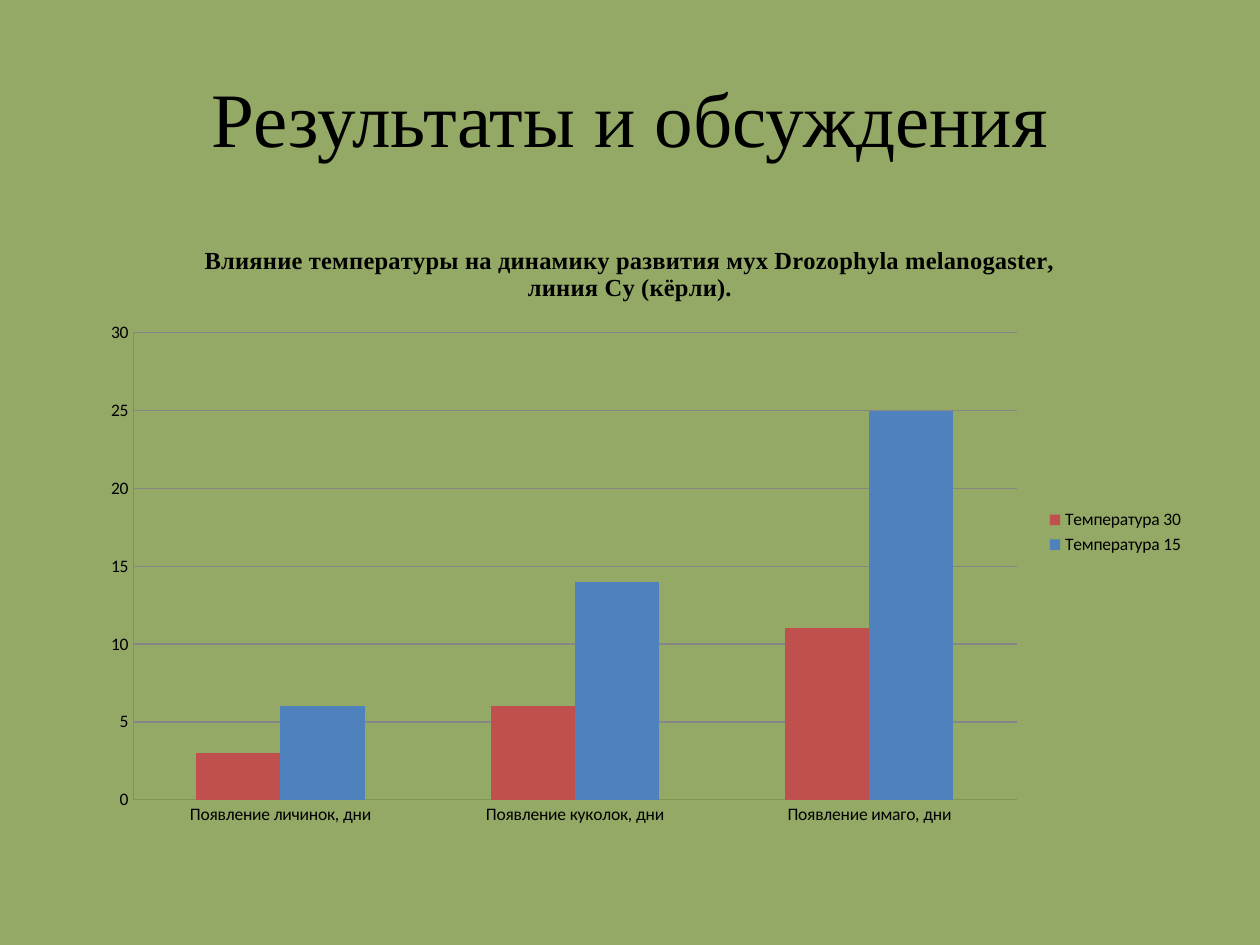
import pptx
import pptx.chart.data
import pptx.dml.color
import pptx.enum.chart
import pptx.enum.text
import pptx.oxml
import pptx.oxml.ns
import pptx.util

RGBColor = pptx.dml.color.RGBColor
OLIVE = RGBColor(0x94, 0xA9, 0x65)
BLACK = RGBColor(0, 0, 0)
GRAY = RGBColor(0x86, 0x86, 0x86)
AXIS_GREEN = RGBColor(0x7F, 0x95, 0x50)
RED = RGBColor(0xC0, 0x50, 0x4D)
BLUE = RGBColor(0x4F, 0x81, 0xBD)

WIDTH, HEIGHT = pptx.util.Inches(10), pptx.util.Inches(7.5)
SERIF, SANS = "Times New Roman", "Calibri"
STAGES = ["Появление личинок, дни", "Появление куколок, дни", "Появление имаго, дни"]
TEMPERATURES = [
    ("Температура 30", (3, 6, 11), RED),
    ("Температура 15", (6, 14, 25), BLUE),
]
CAPTION = ("Влияние температуры на динамику развития мух "
           "Drozophyla melanogaster, линия Cy (кёрли).")
PLOT_SHARES = {"x": 0.062, "y": 0.18, "w": 0.779, "h": 0.749}


def area(left, top, width, height):
    """Turn shares of the slide into a left, top, width, height box."""
    return (int(WIDTH * left), int(HEIGHT * top), int(WIDTH * width), int(HEIGHT * height))


def style_font(font, name, size, bold=False):
    """Set a black font of the given face and size."""
    font.name, font.size, font.bold = name, pptx.util.Pt(size), bold
    font.color.rgb = BLACK


def add_heading(slide, text):
    """Fill and place the title placeholder."""
    heading = slide.shapes.title
    heading.left, heading.top, heading.width, heading.height = area(0.05, 0.04, 0.9, 1 / 6)
    frame = heading.text_frame
    frame.vertical_anchor = pptx.enum.text.MSO_ANCHOR.MIDDLE
    paragraph = frame.paragraphs[0]
    paragraph.alignment = pptx.enum.text.PP_ALIGN.CENTER
    run = paragraph.add_run()
    run.text = text
    style_font(run.font, SERIF, 44)


def place_plot(chart, shares):
    """Fix the inner plot area at shares of the chart's size."""
    modes = "".join(f'<c:{side}Mode val="edge"/>' for side in "xy")
    sizes = "".join(f'<c:{side} val="{share}"/>' for side, share in shares.items())
    layout = pptx.oxml.parse_xml(
        f'<c:layout {pptx.oxml.ns.nsdecls("c")}><c:manualLayout>'
        f'<c:layoutTarget val="inner"/>{modes}{sizes}</c:manualLayout></c:layout>')
    plot_area = chart.element.find(".//" + pptx.oxml.ns.qn("c:plotArea"))
    for automatic in plot_area.findall(pptx.oxml.ns.qn("c:layout")):
        plot_area.remove(automatic)
    plot_area.insert(0, layout)


def style_axes(chart):
    """Remove tick marks and colour the axis lines and gridlines."""
    for axis in (chart.category_axis, chart.value_axis):
        axis.major_tick_mark = pptx.enum.chart.XL_TICK_MARK.NONE
        axis.minor_tick_mark = pptx.enum.chart.XL_TICK_MARK.NONE
        axis.format.line.color.rgb = AXIS_GREEN
    days = chart.value_axis
    days.minimum_scale, days.maximum_scale, days.major_unit = 0, 30, 5
    days.has_major_gridlines = True
    days.major_gridlines.format.line.color.rgb = GRAY


def add_development_chart(slide):
    """Add the clustered columns of development time by temperature."""
    data = pptx.chart.data.CategoryChartData()
    data.categories = STAGES
    for name, days, _ in TEMPERATURES:
        data.add_series(name, days)
    chart = slide.shapes.add_chart(
        pptx.enum.chart.XL_CHART_TYPE.COLUMN_CLUSTERED,
        *area(0.05, 0.7 / 3, 0.9, 0.66), data).chart
    style_font(chart.font, SANS, 10)
    chart.has_title = True
    caption = chart.chart_title.text_frame.paragraphs[0].add_run()
    caption.text = CAPTION
    style_font(caption.font, SERIF, 14, bold=True)
    chart.has_legend = True
    chart.legend.position = pptx.enum.chart.XL_LEGEND_POSITION.RIGHT
    chart.legend.include_in_layout = False
    columns = chart.plots[0]
    columns.gap_width, columns.overlap = 150, 0
    columns.vary_by_categories = False
    for series, (_, _, color) in zip(columns.series, TEMPERATURES):
        series.format.fill.solid()
        series.format.fill.fore_color.rgb = color
    style_axes(chart)
    place_plot(chart, PLOT_SHARES)


def main():
    """Build the results slide and save it."""
    deck = pptx.Presentation()
    deck.slide_width, deck.slide_height = WIDTH, HEIGHT
    slide = deck.slides.add_slide(deck.slide_layouts[5])
    slide.background.fill.solid()
    slide.background.fill.fore_color.rgb = OLIVE
    add_heading(slide, "Результаты и обсуждения")
    add_development_chart(slide)
    deck.save("out.pptx")


if __name__ == "__main__":
    main()
